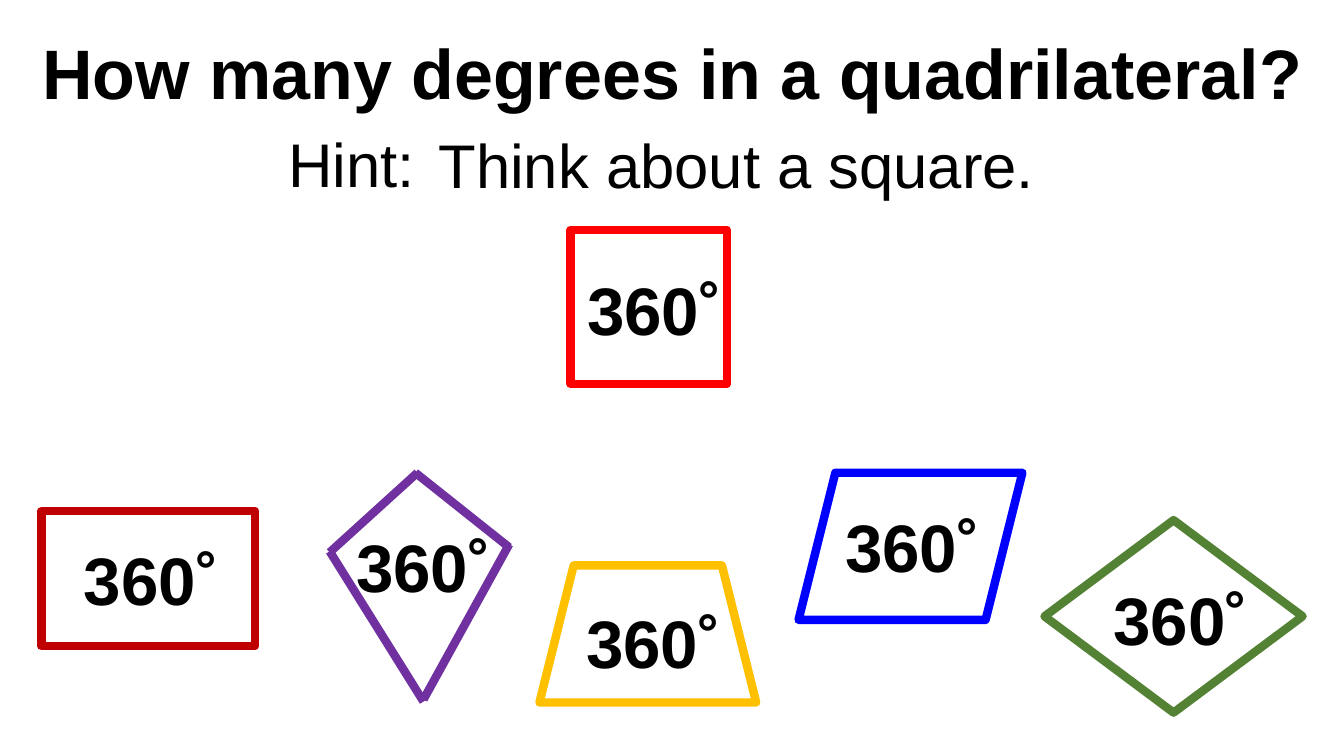
from pptx import Presentation
from pptx import util as u
from pptx.dml.color import RGBColor
from pptx.enum import shapes, text
from pptx.oxml.ns import qn
from lxml import etree

# Content: lengths in px, 100 px to the inch
PX = 9144
SIZE = (1333, 750)
INK = {"black": "000000", "crimson": "C00000", "red": "FF0000", "blue": "0000FF",
       "gold": "FFC000", "green": "548235", "purple": "7030A0"}
EDGE = 6
FONT = "Arial"
KIND = shapes.MSO_SHAPE
MID, LEFT = text.PP_ALIGN.CENTER, text.PP_ALIGN.LEFT

# words, box, size, bold, alignment
HEADS = [
    ("How many degrees in a quadrilateral?", (20, 24, 1295, 94), 50, True, MID),
    ("Hint:", (276, 120, 178, 84), 44, False, LEFT),
    ("Think about a square.", (425, 121, 625, 84), 44, False, LEFT),
]
# preset, box, colour
QUADS = [
    (KIND.RECTANGLE, (41, 507, 212, 134), "crimson"),
    (KIND.RECTANGLE, (566, 228, 155, 153), "red"),
    (KIND.PARALLELOGRAM, (792, 469, 222, 146), "blue"),
    (KIND.TRAPEZOID, (535, 561, 215, 136), "gold"),
    (KIND.FLOWCHART_DECISION, (1036, 516, 256, 191), "green"),
]
KITE = [
    (327, 548, 414, 469),
    (505, 543, 412, 469),
    (420, 696, 327, 547),
    (420, 694, 505, 540),
]
SUM = "360˚"
SUM_SIZE = (156, 91)
SUMS = [(72, 529), (570, 592), (342, 516), (827, 496), (1093, 569), (571, 261)]


def emu(vals):
    return [v * PX for v in vals]


def rgb(name):
    return RGBColor.from_string(INK[name])


def edge(line, name):
    line.color.rgb = rgb(name)
    line.width = u.Pt(EDGE)


def label(words, box, size, bold, align):
    frame = slide.shapes.add_textbox(*emu(box)).text_frame
    frame.word_wrap = True
    para = frame.paragraphs[0]
    para.text = words
    para.alignment = align
    font = para.font
    font.name, font.size, font.bold = FONT, u.Pt(size), bold
    font.color.rgb = rgb("black")


deck = Presentation()
deck.slide_width, deck.slide_height = emu(SIZE)
slide = deck.slides.add_slide(deck.slide_layouts[6])

# Quadrilaterals
for kind, box, name in QUADS:
    quad = slide.shapes.add_shape(kind, *emu(box))
    quad.shadow.inherit = False
    quad.fill.background()
    edge(quad.line, name)

# Kite from four sides
kite = slide.shapes.add_group_shape()
for ends in KITE:
    side = kite.shapes.add_connector(shapes.MSO_CONNECTOR.STRAIGHT, *emu(ends))
    edge(side.line, "purple")
    etree.SubElement(side._element.spPr, qn("a:effectLst"))

# Title, hint and angle sums
for head in HEADS:
    label(*head)
for spot in SUMS:
    label(SUM, spot + SUM_SIZE, 48, True, MID)

deck.save("out.pptx")
